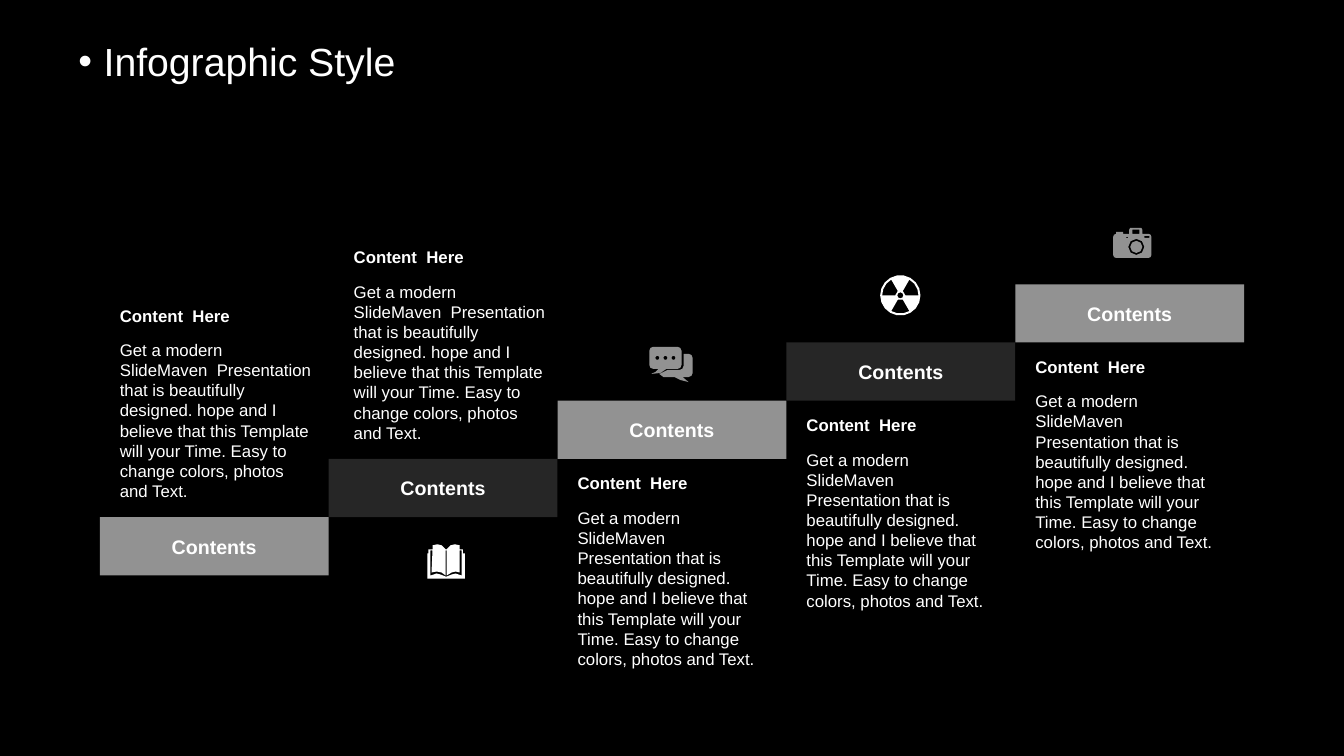
"""Build a dark infographic slide with five rising content steps."""
from math import cos, radians, sin

from lxml import etree
from pptx import Presentation
from pptx.dml.color import RGBColor
from pptx.enum.shapes import MSO_SHAPE
from pptx.enum.text import MSO_ANCHOR, PP_ALIGN
from pptx.oxml.ns import qn
from pptx.util import Inches, Pt

BLACK, WHITE, GRAY, DARK = "000000", "FFFFFF", "929292", "262626"
BODY = ("Get a modern SlideMaven  Presentation that is beautifully designed. "
        "hope and I believe that this Template will your Time. "
        "Easy to change colors, photos and Text.")


def paint(fill, color):
    fill.solid()
    fill.fore_color.rgb = RGBColor.from_string(color)


def write(tf, text, **fmt):
    tf.word_wrap = True
    p = tf.paragraphs[0]
    r = p.add_run()
    r.text = text
    for name, value in {"name": "Arial", **fmt}.items():
        setattr(r.font, name, value)
    paint(r.font.fill, WHITE)
    return p


prs = Presentation()
prs.slide_width, prs.slide_height = Inches(13.33), Inches(7.5)
slide = prs.slides.add_slide(prs.slide_layouts[6])
backdrop = slide.shapes.add_shape(MSO_SHAPE.RECTANGLE, 0, 0, prs.slide_width, prs.slide_height)
backdrop.shadow.inherit = False
paint(backdrop.fill, BLACK)
backdrop.line.fill.background()

title = slide.shapes.add_textbox(Inches(0.68), Inches(0.37), Inches(12.66), Inches(0.79))
p = write(title.text_frame, "Infographic Style", size=Pt(28))
p.line_spacing, p.space_before = 0.9, Pt(10)
pPr = p._p.get_or_add_pPr()
pPr.set("marL", str(Inches(0.25)))
pPr.set("indent", str(-Inches(0.25)))
etree.SubElement(pPr, qn("a:buFont")).set("typeface", "Arial")
etree.SubElement(pPr, qn("a:buChar")).set("char", "•")

step_w, step_h = 2.27, (5.13 - 2.82) / 4
steps = [
    (GRAY, 0.1, -2.15, 2.11),
    (DARK, 0.15, -2.15, 2.11),
    (GRAY, 0.1, 0.67, 2.08),
    (DARK, 0.1, 0.67, 2.08),
    (GRAY, 0.1, 0.67, 2.08),
]
for i, (color, dx, dy, text_w) in enumerate(steps):
    x, y = 0.99 + i * step_w, 5.13 - i * step_h
    sp = slide.shapes.add_shape(MSO_SHAPE.RECTANGLE, Inches(x), Inches(y),
                                Inches(step_w), Inches(step_h))
    sp.shadow.inherit = False
    paint(sp.fill, color)
    sp.line.fill.background()
    sp.text_frame.vertical_anchor = MSO_ANCHOR.MIDDLE
    write(sp.text_frame, "Contents", size=Pt(14), bold=True).alignment = PP_ALIGN.CENTER

    for text, top, height, bold in [("Content  Here", 0, 0.3, True), (BODY, 0.34, 1.72, False)]:
        box = slide.shapes.add_textbox(Inches(x + dx), Inches(y + dy + top),
                                       Inches(text_w), Inches(height))
        write(box.text_frame, text, size=Pt(12), bold=bold)

book = [
    [(4.24, 5.49), (4.25, 5.49), (4.25, 5.45), (4.29, 5.45), (4.29, 5.41), (4.34, 5.4),
     (4.38, 5.41), (4.42, 5.45), (4.43, 5.45), (4.47, 5.41), (4.51, 5.4), (4.56, 5.41),
     (4.56, 5.45), (4.59, 5.45), (4.59, 5.49), (4.61, 5.49), (4.61, 5.74), (4.24, 5.74)],
    [(4.29, 5.46), (4.27, 5.46), (4.27, 5.71), (4.33, 5.69), (4.37, 5.7), (4.42, 5.72),
     (4.43, 5.72), (4.48, 5.7), (4.52, 5.69), (4.58, 5.71), (4.58, 5.46), (4.56, 5.46),
     (4.56, 5.68), (4.52, 5.67), (4.48, 5.68), (4.43, 5.71), (4.43, 5.46), (4.42, 5.46),
     (4.42, 5.71), (4.38, 5.68), (4.33, 5.67), (4.28, 5.68)],
]
radiation = [[(8.93, 2.93, 0.2, 0, 360)], [(8.93, 2.93, 0.03, 0, 360)]]
radiation += [[(8.93, 2.93, 0.18, a, a + 60), (8.93, 2.93, 0.05, a + 60, a)]
              for a in (60, 180, 300)]
camera = [
    [(11.07, 2.35, 0.03, 180, 270), (11.07, 2.3), (11.14, 2.3), (11.14, 2.32), (11.2, 2.32),
     (11.2, 2.28), (11.21, 2.26), (11.32, 2.26), (11.33, 2.28), (11.33, 2.32),
     (11.39, 2.35, 0.03, 270, 360), (11.39, 2.53, 0.03, 0, 90), (11.07, 2.53, 0.03, 90, 180)],
    [(11.23, 2.28), (11.3, 2.28), (11.3, 2.32), (11.23, 2.32)],
    [(11.17, 2.35), (11.19, 2.35), (11.19, 2.36), (11.17, 2.36)],
    [(11.35, 2.34), (11.4, 2.34), (11.4, 2.36), (11.35, 2.36)],
    [(11.27, 2.45, 0.08, 0, 360)],
    [(11.27, 2.45, 0.06, 0, 360)],
]
chat = [
    [(6.48, 3.48, 0.04, 180, 270), (6.72, 3.48, 0.04, 270, 360), (6.72, 3.62, 0.04, 0, 90),
     (6.61, 3.66), (6.55, 3.7), (6.46, 3.71), (6.5, 3.69), (6.53, 3.66),
     (6.48, 3.62, 0.04, 90, 180)],
    [(6.78, 3.51), (6.83, 3.55, 0.04, 270, 360), (6.83, 3.7, 0.04, 0, 90), (6.77, 3.74),
     (6.83, 3.79), (6.75, 3.77), (6.69, 3.74), (6.58, 3.74), (6.54, 3.71), (6.62, 3.67),
     (6.74, 3.63, 0.04, 90, 0)],
]
chat += [[(x, 3.55, 0.02, 0, 360)] for x in (6.52, 6.6, 6.68)]

for outlines, color in [(book, WHITE), (radiation, WHITE), (camera, GRAY), (chat, GRAY)]:
    builder = None
    for outline in outlines:
        points = []
        for x, y, *arc in outline:
            if arc:
                radius, start, end = arc
                n = abs(end - start) // (20 if radius > 0.1 else 45)
                angles = [radians(start + (end - start) * k / n) for k in range(n + 1)]
                points += [(x + radius * cos(a), y + radius * sin(a)) for a in angles]
            else:
                points.append((x, y))
        points = [(Inches(x), Inches(y)) for x, y in points]
        if builder is None:
            builder = slide.shapes.build_freeform(*points[0])
        else:
            builder.move_to(*points[0])
        builder.add_line_segments(points[1:], close=True)
    icon = builder.convert_to_shape()
    icon.shadow.inherit = False
    paint(icon.fill, color)
    icon.line.fill.background()

prs.save("out.pptx")
